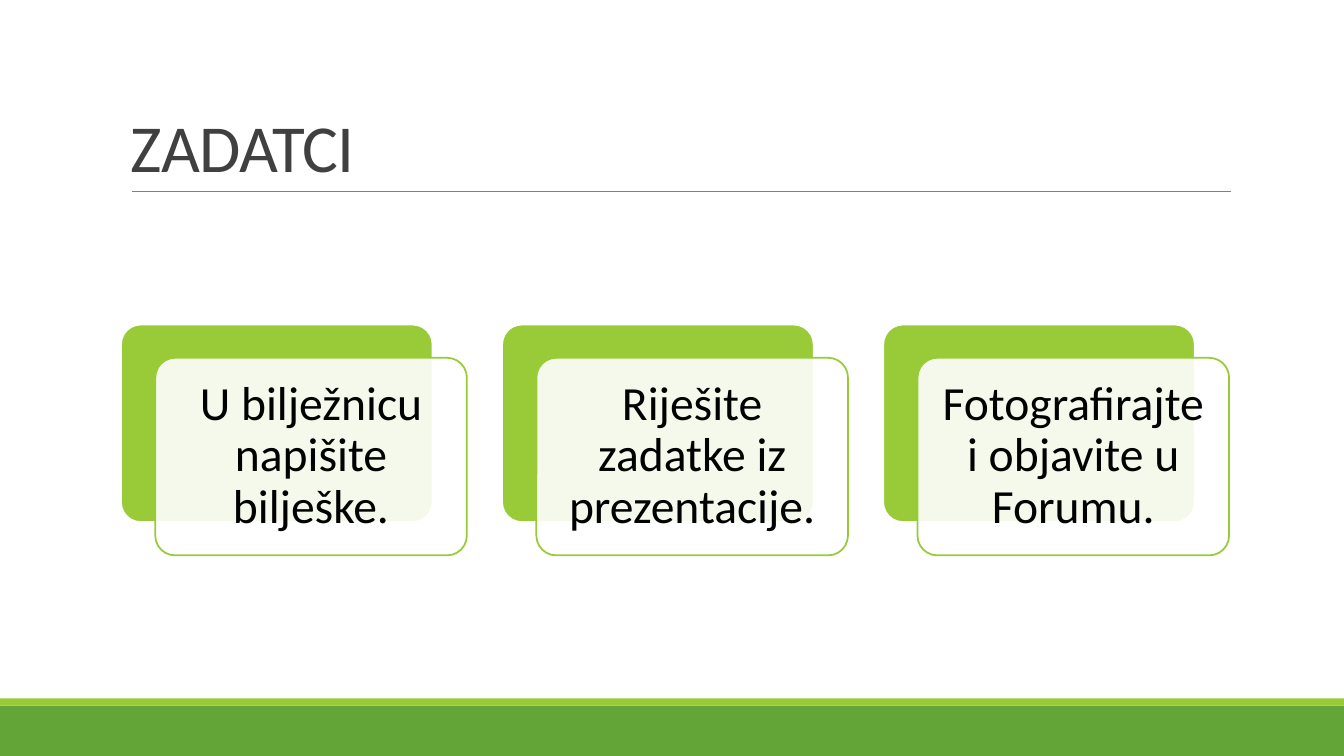
from dataclasses import dataclass

from lxml.etree import SubElement
from pptx import Presentation
from pptx.dml.color import RGBColor
from pptx.enum.shapes import MSO_CONNECTOR, MSO_SHAPE
from pptx.enum.text import MSO_ANCHOR, PP_ALIGN
from pptx.oxml.ns import qn
from pptx.util import Pt

SCALE = 9144


@dataclass(frozen=True)
class Theme:
    font: str = "Calibri"
    green: str = "63A537"
    lime: str = "99CB38"
    white: str = "FFFFFF"
    gray: str = "808080"
    dark: str = "404040"
    black: str = "000000"
    head: int = 48
    body: int = 34
    edge: float = 1.25
    hair: float = 0.5


THEME = Theme()
TASKS = [
    "U bilježnicu napišite bilješke.",
    "Riješite zadatke iz prezentacije.",
    "Fotografirajte i objavite u Forumu.",
]


def px(*sizes):
    return [size * SCALE for size in sizes]


def rgb(color):
    return RGBColor.from_string(color)


def apply(item, values):
    for name, value in values.items():
        setattr(item, name, value)


def add_box(slide, kind, area, fill, line=None):
    box = slide.shapes.add_shape(kind, *px(*area))
    box.shadow.inherit = False
    box.fill.solid()
    box.fill.fore_color.rgb = rgb(fill)
    if line:
        box.line.color.rgb = rgb(line)
        box.line.width = Pt(THEME.edge)
    else:
        box.line.fill.background()
    return box


def add_rule(slide, left, right, top):
    rule = slide.shapes.add_connector(
        MSO_CONNECTOR.STRAIGHT, *px(left, top, right, top))
    rule.line.color.rgb = rgb(THEME.gray)
    rule.line.width = Pt(THEME.hair)
    SubElement(rule.element.spPr, qn("a:effectLst"))


def put_text(shape, text, size, color, frame, para):
    apply(shape.text_frame, {"word_wrap": True, **frame})
    line = shape.text_frame.paragraphs[0]
    apply(line, para)
    run = line.add_run()
    run.text = text
    apply(run.font, {"name": THEME.font, "size": Pt(size)})
    run.font.color.rgb = rgb(color)


def add_title(slide, text):
    title = slide.shapes.add_textbox(*px(120, 31, 1100, 159))
    put_text(title, text, THEME.head, THEME.dark,
             {"vertical_anchor": MSO_ANCHOR.BOTTOM}, {"line_spacing": 0.85})
    for props in title.element.iter(qn("a:rPr")):
        props.set("spc", "-50")


def add_card(slide, left, text):
    top, wide, high = 322, 309, 196
    back = add_box(slide, MSO_SHAPE.ROUNDED_RECTANGLE,
                   (left, top, wide, high), THEME.lime, THEME.white)
    front = add_box(slide, MSO_SHAPE.ROUNDED_RECTANGLE,
                    (left + 34, top + 33, wide, high), THEME.white, THEME.lime)
    for box in (back, front):
        box.adjustments[0] = 0.1
    tint = front.element.spPr.find(qn("a:solidFill"))[0]
    SubElement(tint, qn("a:alpha"), val="90000")
    sides = ("left", "top", "right", "bottom")
    frame = {f"margin_{side}": 14 * SCALE for side in sides}
    put_text(front, text, THEME.body, THEME.black,
             {"vertical_anchor": MSO_ANCHOR.MIDDLE, **frame},
             {"alignment": PP_ALIGN.CENTER, "line_spacing": 0.9})


def main():
    deck = Presentation()
    deck.slide_width, deck.slide_height = px(1333, 750)
    slide = deck.slides.add_slide(deck.slide_layouts[6])
    add_box(slide, MSO_SHAPE.RECTANGLE, (0, 700, 1333, 50), THEME.green)
    add_box(slide, MSO_SHAPE.RECTANGLE, (0, 693, 1333, 7), THEME.lime)
    add_rule(slide, 131, 1221, 190)
    add_title(slide, "ZADATCI")
    for index, task in enumerate(TASKS):
        add_card(slide, 120 + index * 378, task)
    deck.save("out.pptx")


if __name__ == "__main__":
    main()
